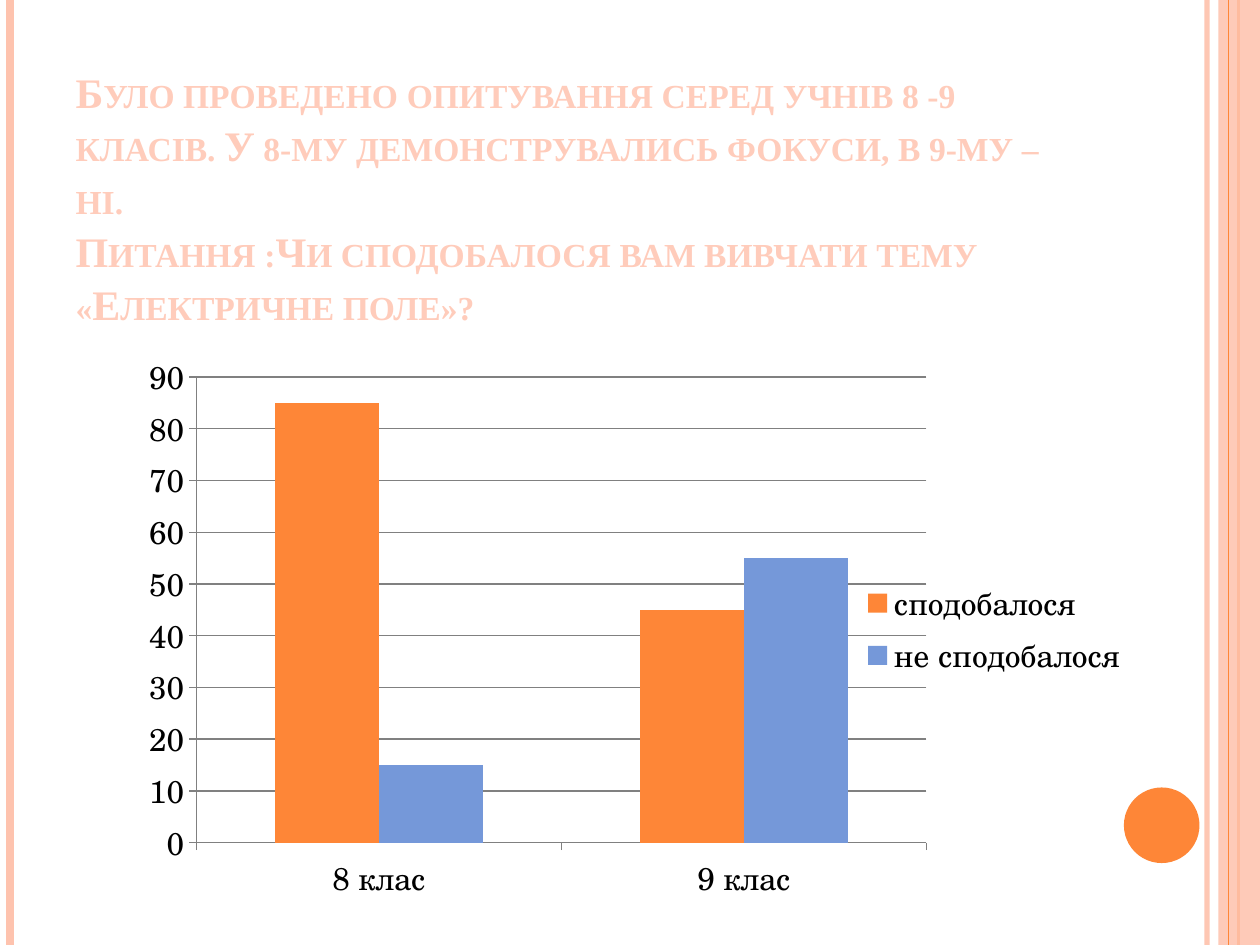
"""Build a survey slide with a title, a clustered column chart and side stripes."""
from dataclasses import dataclass

from lxml import etree
from pptx import Presentation
from pptx.chart.data import CategoryChartData
from pptx.dml.color import RGBColor
from pptx.enum.chart import XL_CHART_TYPE, XL_LEGEND_POSITION, XL_TICK_MARK
from pptx.enum.shapes import MSO_CONNECTOR, MSO_SHAPE
from pptx.enum.text import MSO_ANCHOR, MSO_AUTO_SIZE, PP_ALIGN
from pptx.oxml.ns import qn
from pptx.util import Inches, Pt

COLUMNS = XL_CHART_TYPE.COLUMN_CLUSTERED
RIGHT = XL_LEGEND_POSITION.RIGHT
OUTSIDE = XL_TICK_MARK.OUTSIDE
STRAIGHT = MSO_CONNECTOR.STRAIGHT
RECT, OVAL = MSO_SHAPE.RECTANGLE, MSO_SHAPE.OVAL
BOTTOM, LEFT = MSO_ANCHOR.BOTTOM, PP_ALIGN.LEFT
NO_FIT = MSO_AUTO_SIZE.NONE

ORANGE, PEACH, BLUE = "FE8637", "FEC3AE", "7598D9"
TITLE_COLOR, GRAY, BLACK = "FFCCBB", "808080", "000000"
HEIGHT = 7.5


@dataclass
class Stripe:
    x: float
    color: str
    width: float
    alpha: int = 100


@dataclass
class Series:
    name: str
    values: tuple[int, ...]
    color: str


BACK_STRIPES = [Stripe(9.58, PEACH, 3, 93), Stripe(0.08, PEACH, 4.5), Stripe(9.83, ORANGE, 1.5)]
FRONT_STRIPE = Stripe(9.75, ORANGE, 0.75)
CLASSES = ["8 клас", "9 клас"]
ANSWERS = [
    Series("сподобалося", (85, 45), ORANGE),
    Series("не сподобалося", (15, 55), BLUE),
]
TITLE_LINES = [
    "Було проведено опитування серед учнів 8 -9 класів. "
    "У 8-му демонструвались фокуси, в 9-му – ні.",
    "Питання :Чи сподобалося вам вивчати тему «Електричне поле»?",
]


def rgb(color: str) -> RGBColor:
    return RGBColor.from_string(color)


def set_alpha(sp, percent: int) -> None:
    if percent < 100:
        clr = next(sp._element.spPr.iter(qn("a:srgbClr")))
        etree.SubElement(clr, qn("a:alpha"), val=str(percent * 1000))


def add_stripe(slide, stripe: Stripe) -> None:
    x = Inches(stripe.x)
    sp = slide.shapes.add_connector(STRAIGHT, x, 0, x, Inches(HEIGHT))
    sp.line.color.rgb = rgb(stripe.color)
    sp.line.width = Pt(stripe.width)
    set_alpha(sp, stripe.alpha)
    etree.SubElement(sp._element.spPr, qn("a:effectLst"))


def add_block(slide, kind, x: float, y: float, w: float, h: float, color: str, alpha: int = 100) -> None:
    sp = slide.shapes.add_shape(kind, Inches(x), Inches(y), Inches(w), Inches(h))
    sp.shadow.inherit = False
    sp.fill.solid()
    sp.fill.fore_color.rgb = rgb(color)
    sp.line.fill.background()
    set_alpha(sp, alpha)


def add_text(p, text: str, *, font: str, size: float, color: str, bold: bool = False, caps: str = "none") -> None:
    r = p.add_run()
    r.text = text
    r.font.name = font
    r.font.size = Pt(size)
    r.font.bold = bold
    r.font.color.rgb = rgb(color)
    r.font._element.set("cap", caps)


def fill_title(slide) -> None:
    sp = slide.shapes.title
    sp.left, sp.top, sp.width, sp.height = (Inches(v) for v in (0.5, 0.3, 8.17, 2.36))
    tf = sp.text_frame
    tf.word_wrap = True
    tf.auto_size = NO_FIT
    tf.vertical_anchor = BOTTOM
    p = tf.paragraphs[0]
    p.alignment = LEFT
    p.line_spacing = 1.05
    for i, line in enumerate(TITLE_LINES):
        if i:
            p.add_line_break()
        add_text(p, line, font="Times New Roman", size=24, color=TITLE_COLOR, bold=True, caps="small")


def set_plot_layout(chart, x: float, y: float, w: float, h: float) -> None:
    area = chart._chartSpace.chart.plotArea
    for old in area.findall(qn("c:layout")):
        area.remove(old)
    layout = etree.Element(qn("c:layout"))
    area.insert(0, layout)
    manual = etree.SubElement(layout, qn("c:manualLayout"))
    parts = {"layoutTarget": "inner", "xMode": "edge", "yMode": "edge", "x": x, "y": y, "w": w, "h": h}
    for tag, value in parts.items():
        etree.SubElement(manual, qn(f"c:{tag}"), val=str(value))


def add_survey_chart(slide) -> None:
    data = CategoryChartData()
    data.categories = CLASSES
    for answer in ANSWERS:
        data.add_series(answer.name, answer.values)
    box = (Inches(v) for v in (0.31, 2.73, 8.75, 4.53))
    chart = slide.shapes.add_chart(COLUMNS, *box, data).chart
    chart.has_title = False
    chart.font.name = "TeX Gyre Schola"
    chart.font.size = Pt(18)
    chart.font.color.rgb = rgb(BLACK)
    chart.has_legend = True
    chart.legend.position = RIGHT
    chart.legend.include_in_layout = False
    plot = chart.plots[0]
    plot.vary_by_categories = False
    plot.gap_width = 150
    plot.overlap = 0
    for series, answer in zip(plot.series, ANSWERS):
        series.format.fill.solid()
        series.format.fill.fore_color.rgb = rgb(answer.color)
    for axis in (chart.category_axis, chart.value_axis):
        axis.major_tick_mark = OUTSIDE
        axis.format.line.color.rgb = rgb(GRAY)
    axis = chart.value_axis
    axis.minimum_scale, axis.maximum_scale, axis.major_unit = 0, 90, 10
    axis.has_major_gridlines = True
    axis.major_gridlines.format.line.color.rgb = rgb(GRAY)
    set_plot_layout(chart, 0.143, 0.058, 0.662, 0.816)


def main() -> None:
    prs = Presentation()
    prs.slide_width, prs.slide_height = Inches(10), Inches(HEIGHT)
    slide = prs.slides.add_slide(prs.slide_layouts[5])
    for stripe in BACK_STRIPES:
        add_stripe(slide, stripe)
    add_block(slide, RECT, 9.67, 0, 0.33, HEIGHT, PEACH, 87)
    add_stripe(slide, FRONT_STRIPE)
    add_block(slide, OVAL, 8.92, 6.25, 0.6, 0.6, ORANGE)
    fill_title(slide)
    add_survey_chart(slide)
    prs.save("out.pptx")


if __name__ == "__main__":
    main()
